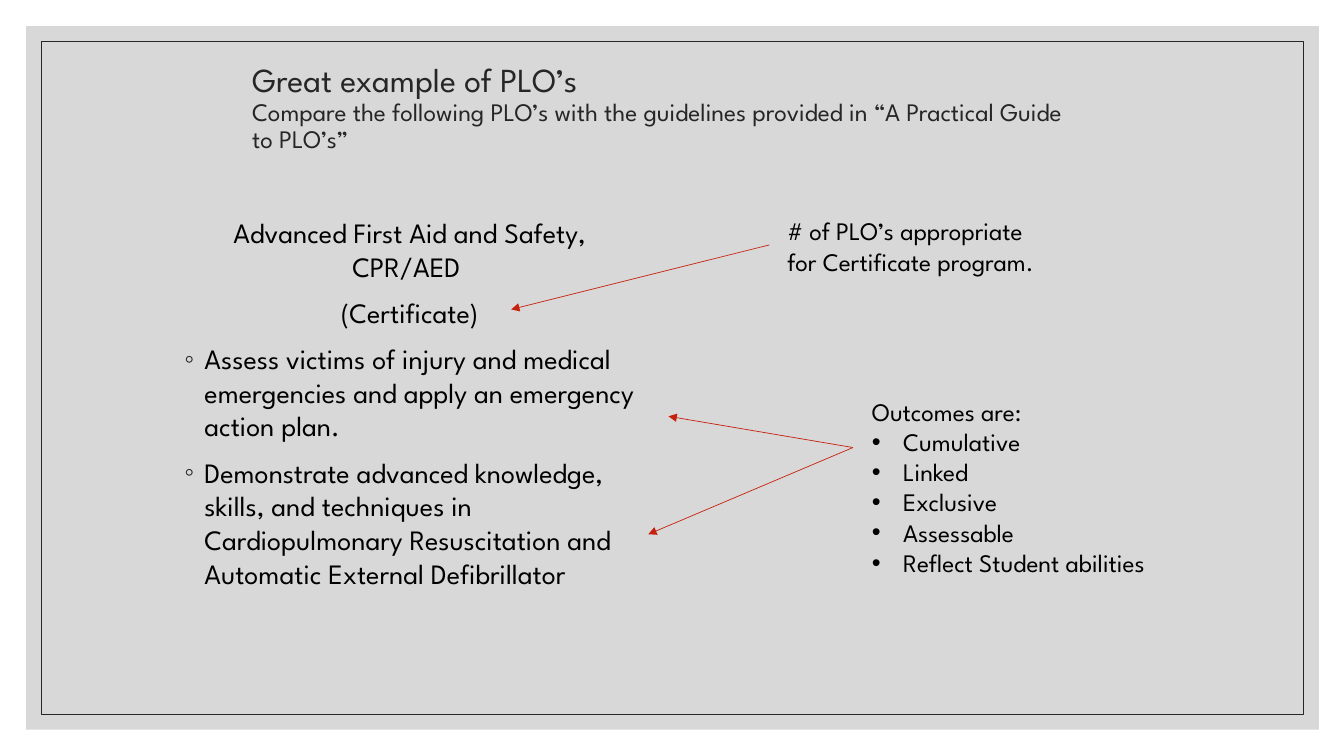
from lxml.etree import SubElement
from pptx import Presentation
from pptx.dml.color import RGBColor
from pptx.enum.shapes import MSO_CONNECTOR, MSO_SHAPE
from pptx.enum.text import MSO_ANCHOR, MSO_AUTO_SIZE, PP_ALIGN
from pptx.oxml.ns import qn
from pptx.util import Inches, Pt

FONT = "League Spartan"
PANEL_GRAY = RGBColor(0xBF, 0xBF, 0xBF)
DARK_GRAY = RGBColor(0x26, 0x26, 0x26)
BLACK = RGBColor(0, 0, 0)
RED = RGBColor(0xC6, 0x21, 0x0E)

TITLE = "Great example of PLO’s"
SUBTITLE = "Compare the following PLO’s with the guidelines provided in “A Practical Guide to PLO’s”"
PROGRAM = ["Advanced First Aid and Safety, CPR/AED ", "(Certificate)"]
OUTCOMES = [
    "Assess victims of injury and medical emergencies and apply an emergency action plan.",
    "Demonstrate advanced knowledge, skills, and techniques in "
    "Cardiopulmonary Resuscitation and Automatic External Defibrillator",
]
COUNT_NOTE = "# of PLO’s appropriate for Certificate program."
QUALITIES_HEADING = "Outcomes are:"
QUALITIES = ["Cumulative", "Linked", "Exclusive", "Assessable", "Reflect Student abilities"]
ARROWS = [
    ((7.63, 2.43), (5.07, 3.07)),
    ((8.46, 4.44), (6.63, 4.13)),
    ((8.46, 4.44), (6.43, 5.3)),
]


def add_text(paragraph, text, size=18, color=BLACK, align=PP_ALIGN.LEFT, before=0,
             bullet=None, bullet_color=BLACK, indent=0):
    """Add a formatted run and paragraph settings, with an optional bullet."""
    run = paragraph.add_run()
    run.text = text
    run.font.name = FONT
    run.font.size = Pt(size)
    run.font.color.rgb = color
    paragraph.alignment = align
    paragraph.space_before = Pt(before)
    if bullet:
        properties = paragraph._p.get_or_add_pPr()
        properties.set("marL", str(Inches(indent)))
        properties.set("indent", str(-Inches(indent)))
        shade = SubElement(properties, qn("a:buClr"))
        SubElement(shade, qn("a:srgbClr")).set("val", str(bullet_color))
        SubElement(properties, qn("a:buFont")).set("typeface", "Arial")
        SubElement(properties, qn("a:buChar")).set("char", bullet)


def add_text_box(slide, box, entries, auto_size=MSO_AUTO_SIZE.NONE):
    """Add a wrapping text box from (text, format) entries."""
    frame = slide.shapes.add_textbox(*map(Inches, box)).text_frame
    frame.word_wrap = True
    frame.auto_size = auto_size
    for index, (text, style) in enumerate(entries):
        paragraph = frame.add_paragraph() if index else frame.paragraphs[0]
        add_text(paragraph, text, **style)


def add_panel(slide):
    """Add the translucent panel and its thin inner frame."""
    panel = slide.shapes.add_shape(MSO_SHAPE.RECTANGLE, *map(Inches, (0.26, 0.26, 12.82, 6.98)))
    panel.shadow.inherit = False
    panel.fill.solid()
    panel.fill.fore_color.rgb = PANEL_GRAY
    color = panel._element.spPr.find(qn("a:solidFill"))[0]
    SubElement(color, qn("a:alpha")).set("val", "60000")
    panel.line.fill.background()
    border = slide.shapes.add_shape(MSO_SHAPE.RECTANGLE, *map(Inches, (0.41, 0.41, 12.52, 6.68)))
    border.shadow.inherit = False
    border.fill.background()
    border.line.color.rgb = DARK_GRAY
    border.line.width = Pt(0.5)


def add_title(slide):
    """Fill the title placeholder and bring it in front of the panel."""
    title = slide.shapes.title
    title.left, title.top, title.width, title.height = map(Inches, (2.4, 0.43, 8.45, 1.3))
    slide.shapes._spTree.append(title._element)
    frame = title.text_frame
    frame.word_wrap = True
    frame.auto_size = MSO_AUTO_SIZE.NONE
    frame.vertical_anchor = MSO_ANCHOR.MIDDLE
    paragraph = frame.paragraphs[0]
    paragraph.line_spacing = 0.9
    add_text(paragraph, TITLE, size=24, color=DARK_GRAY)
    paragraph.add_line_break()
    add_text(paragraph, SUBTITLE, color=DARK_GRAY)


def add_arrow(slide, start, end):
    """Add a thin red arrow between two points."""
    arrow = slide.shapes.add_connector(MSO_CONNECTOR.STRAIGHT, *map(Inches, start + end))
    arrow.line.color.rgb = RED
    arrow.line.width = Pt(0.5)
    SubElement(arrow.line._get_or_add_ln(), qn("a:tailEnd")).set("type", "triangle")
    SubElement(arrow._element.spPr, qn("a:effectLst"))


def main():
    """Build and save the slide."""
    presentation = Presentation()
    presentation.slide_width, presentation.slide_height = Inches(13.33), Inches(7.5)
    slide = presentation.slides.add_slide(presentation.slide_layouts[5])
    add_panel(slide)
    add_title(slide)

    centered = dict(size=20, align=PP_ALIGN.CENTER, before=9)
    outcome = dict(size=20, before=9, bullet="◦", bullet_color=DARK_GRAY, indent=0.2)
    quality = dict(bullet="•", indent=0.31)
    add_text_box(slide, (1.73, 2.09, 4.67, 4.71),
                 [(text, centered) for text in PROGRAM] + [(text, outcome) for text in OUTCOMES])
    add_text_box(slide, (7.71, 2.09, 2.72, 0.71), [(COUNT_NOTE, {})],
                 MSO_AUTO_SIZE.SHAPE_TO_FIT_TEXT)
    add_text_box(slide, (8.55, 3.88, 3.16, 1.92),
                 [(QUALITIES_HEADING, {})] + [(text, quality) for text in QUALITIES],
                 MSO_AUTO_SIZE.SHAPE_TO_FIT_TEXT)
    for start, end in ARROWS:
        add_arrow(slide, start, end)
    presentation.save("out.pptx")


if __name__ == "__main__":
    main()
